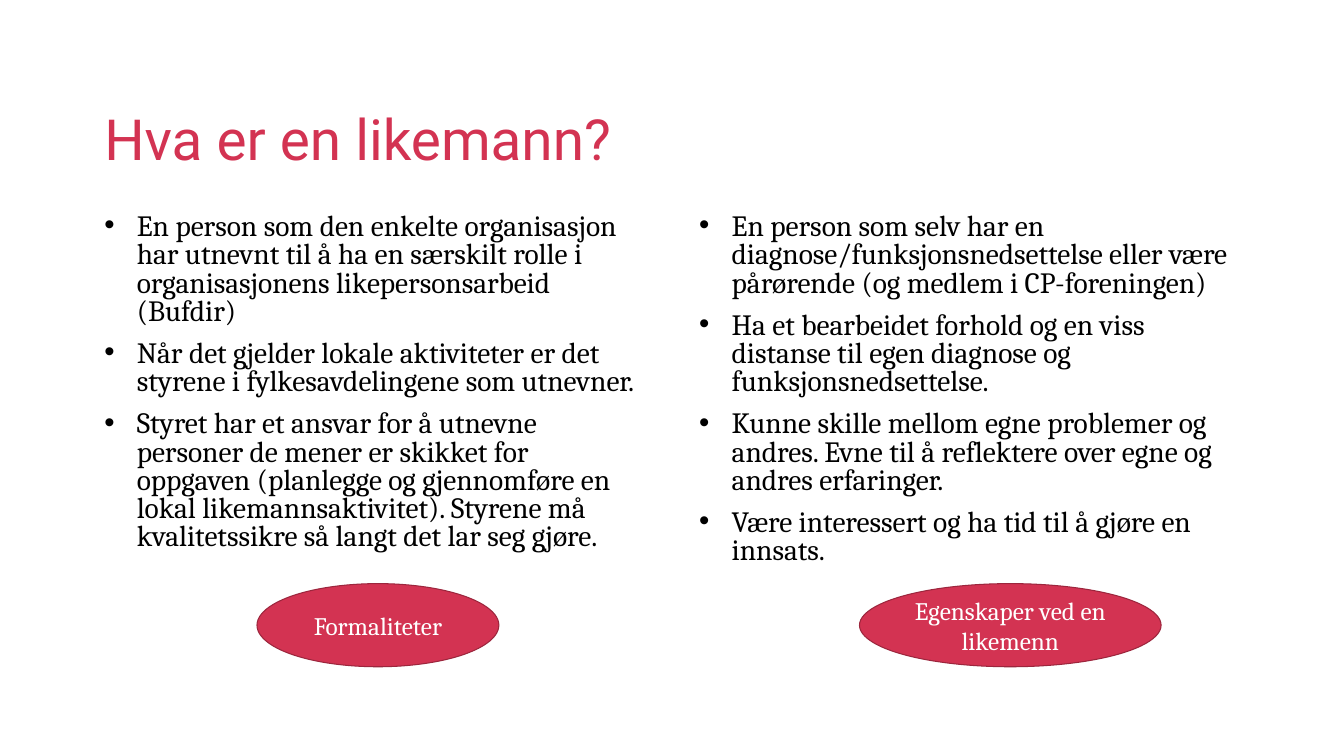
from dataclasses import dataclass

from lxml.etree import SubElement
from pptx import Presentation
from pptx.dml.color import RGBColor
from pptx.enum.shapes import MSO_SHAPE
from pptx.enum.text import MSO_ANCHOR, PP_ALIGN
from pptx.oxml.ns import qn
from pptx.util import Inches, Pt


@dataclass(frozen=True)
class Theme:
    red: RGBColor = RGBColor.from_string("D33352")
    dark_red: RGBColor = RGBColor.from_string("9C263D")
    black: RGBColor = RGBColor.from_string("000000")
    white: RGBColor = RGBColor.from_string("FFFFFF")
    heading_font: str = "Roboto"
    body_font: str = "Cambria"
    title_size: Pt = Pt(54)
    body_size: Pt = Pt(28)
    label_size: Pt = Pt(24)


theme = Theme()


def add_text_frame(slide, left, top, width, height, anchor):
    box = slide.shapes.add_textbox(Inches(left), Inches(top), Inches(width), Inches(height))
    frame = box.text_frame
    frame.word_wrap = True
    frame.vertical_anchor = anchor
    frame.margin_left = frame.margin_right = frame.margin_top = frame.margin_bottom = 0
    return frame


def style_paragraph(paragraph, text, font_name, size, color):
    paragraph.text = text
    paragraph.font.name = font_name
    paragraph.font.size = size
    paragraph.font.color.rgb = color


presentation = Presentation()
presentation.slide_width = Inches(17.78)
presentation.slide_height = Inches(10)
slide = presentation.slides.add_slide(presentation.slide_layouts[6])

title = add_text_frame(slide, 1.38, 0.32, 15.16, 1.97, MSO_ANCHOR.BOTTOM).paragraphs[0]
style_paragraph(title, "Hva er en likemann?", theme.heading_font, theme.title_size, theme.red)
title.line_spacing = 0.9

columns = [
    (1.38, [
        "En person som den enkelte organisasjon har utnevnt til å ha en særskilt rolle i "
        "organisasjonens likepersonsarbeid (Bufdir)",
        "Når det gjelder lokale aktiviteter er det styrene i fylkesavdelingene som utnevner.",
        "Styret har et ansvar for å utnevne personer de mener er skikket for oppgaven "
        "(planlegge og gjennomføre en lokal likemannsaktivitet). Styrene må kvalitetssikre "
        "så langt det lar seg gjøre.",
    ]),
    (9.25, [
        "En person som selv har en diagnose/funksjonsnedsettelse eller være pårørende "
        "(og medlem i CP-foreningen)",
        "Ha et bearbeidet forhold og en viss distanse til egen diagnose og funksjonsnedsettelse.",
        "Kunne skille mellom egne problemer og andres. Evne til å reflektere over egne og "
        "andres erfaringer.",
        "Være interessert og ha tid til å gjøre en innsats.",
    ]),
]
for left, points in columns:
    frame = add_text_frame(slide, left, 2.83, 7.09, 5.99, MSO_ANCHOR.TOP)
    for index, point in enumerate(points):
        paragraph = frame.add_paragraph() if index else frame.paragraphs[0]
        style_paragraph(paragraph, point, theme.body_font, theme.body_size, theme.black)
        paragraph.line_spacing = 0.8
        paragraph.space_before = Pt(13.3)
        properties = paragraph.font._element.getparent()
        properties.set("marL", str(Inches(0.43)))
        properties.set("indent", str(-Inches(0.43)))
        bullet_font = SubElement(properties, qn("a:buFont"), typeface="Arial")
        bullet = SubElement(properties, qn("a:buChar"), char="•")
        properties.find(qn("a:defRPr")).addprevious(bullet_font)
        bullet_font.addnext(bullet)

labels = [
    (11.37, 3.99, "Egenskaper ved en likemenn"),
    (3.4, 3.2, "Formaliteter"),
]
for left, width, text in labels:
    ellipse = slide.shapes.add_shape(
        MSO_SHAPE.OVAL, Inches(left), Inches(7.72), Inches(width), Inches(1.1))
    ellipse.shadow.inherit = False
    ellipse.fill.solid()
    ellipse.fill.fore_color.rgb = theme.red
    ellipse.line.color.rgb = theme.dark_red
    ellipse.line.width = Pt(1)
    ellipse.text_frame.word_wrap = True
    ellipse.text_frame.vertical_anchor = MSO_ANCHOR.MIDDLE
    label = ellipse.text_frame.paragraphs[0]
    style_paragraph(label, text, theme.body_font, theme.label_size, theme.white)
    label.alignment = PP_ALIGN.CENTER

presentation.save("out.pptx")
